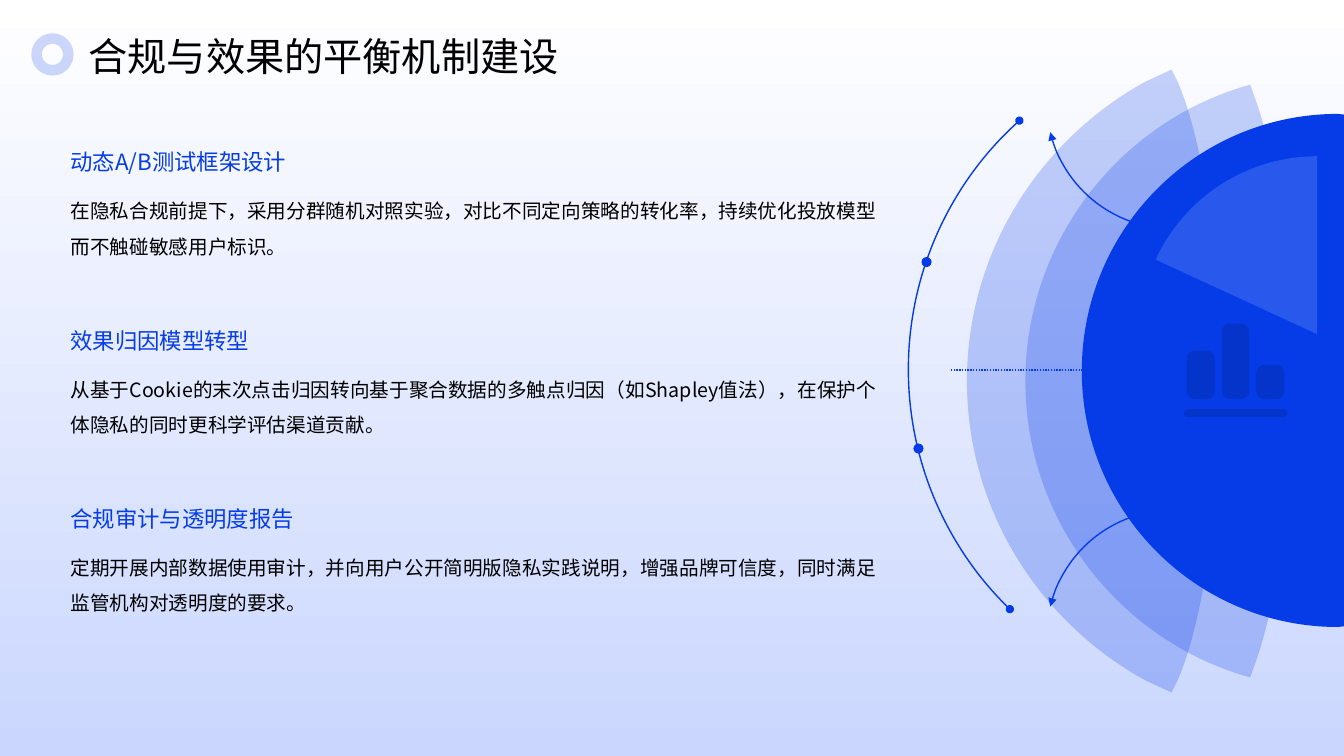
from lxml.etree import SubElement
from pptx import Presentation
from pptx.dml.color import RGBColor
from pptx.enum.dml import MSO_LINE
from pptx.enum.shapes import MSO_CONNECTOR, MSO_SHAPE
from pptx.enum.text import MSO_ANCHOR, MSO_AUTO_SIZE, PP_ALIGN
from pptx.oxml.ns import qn
from pptx.util import Inches, Pt

BLUE = "063CE8"
FONT = "Noto Sans CJK SC"
hex_color = RGBColor.from_string


def style_shape(shape, fill=None, alpha=100, line=None, head=None, tail=None):
    """Set solid fill with opacity in percent, outline with its ends, and no shadow."""
    properties = shape.element.spPr
    if fill:
        shape.fill.solid()
        shape.fill.fore_color.rgb = hex_color(fill)
        if alpha < 100:
            color = properties.find(qn("a:solidFill"))[0]
            SubElement(color, qn("a:alpha"), val=str(alpha * 1000))
    if line:
        shape.line.color.rgb = hex_color(line)
        shape.line.width = Pt(1)
        for tag, end in (("a:headEnd", head), ("a:tailEnd", tail)):
            if end:
                SubElement(properties.find(qn("a:ln")), qn(tag), type=end)
    else:
        shape.line.fill.background()
    SubElement(properties, qn("a:effectLst"))


def write_text(box, text, size, color="000000", spacing=1.0,
               anchor=MSO_ANCHOR.TOP, inset=(0, 0)):
    frame = box.text_frame
    frame.word_wrap = True
    frame.auto_size = MSO_AUTO_SIZE.NONE
    frame.vertical_anchor = anchor
    frame.margin_left = frame.margin_right = Inches(inset[0])
    frame.margin_top = frame.margin_bottom = Inches(inset[1])
    para = frame.paragraphs[0]
    para.alignment = PP_ALIGN.LEFT
    para.line_spacing = spacing
    span = para.add_run()
    span.text = text
    span.font.size = Pt(size)
    span.font.color.rgb = hex_color(color)
    span.font.name = FONT
    SubElement(span.font._element, qn("a:ea"), typeface=FONT)


deck = Presentation()
deck.slide_width, deck.slide_height = Inches(13.33), Inches(7.5)
page = deck.slides.add_slide(deck.slide_layouts[5])
shapes = page.shapes

backdrop = shapes.add_shape(MSO_SHAPE.RECTANGLE, 0, 0, deck.slide_width, deck.slide_height)
backdrop.fill.gradient()
backdrop.fill.gradient_angle = 270
for stop, color, position in zip(backdrop.fill.gradient_stops, ("FFFFFF", "CAD6FE"), (0, 1)):
    stop.color.rgb = hex_color(color)
    stop.position = position
style_shape(backdrop)

# Crescents: tip, then shoulder, two controls and side of each edge; the lower half mirrors
MIDDLE = 3.78
crescents = [
    ((11.62, 0.69),
     [(11.36, 0.81), (10.31, 1.39), (9.59, 2.5), (9.59, MIDDLE)],
     [(11.68, 0.81), (11.93, 1.39), (12.1, 2.5), (12.1, MIDDLE)]),
    ((12.4, 0.84),
     [(12.33, 0.86), (11.08, 1.24), (10.17, 2.41), (10.17, MIDDLE)],
     [(12.45, 0.98), (12.67, 1.59), (12.81, 2.62), (12.81, MIDDLE)]),
]
outlines = []
for tip, outer, inner in crescents:
    lower_tip, *lower = [(x, 2 * MIDDLE - y) for x, y in [tip] + outer + inner]
    points = ([tip] + outer + lower[2::-1] + [lower_tip]
              + lower[4:] + inner[2::-1] + [tip])
    outlines.append(([("MLCCLLCCL", points)], BLUE, 23))

# Disc running off the right edge of the page
disc = [(13.27, 1.13), (11.87, 1.13), (10.73, 2.27), (10.73, 3.68),
        (10.73, 5.08), (11.87, 6.22), (13.27, 6.22), (13.36, 6.21), (13.36, 1.14), (13.27, 1.13)]
outlines.append(([("MCCLLL", disc)], BLUE, 100))

# Bar chart icon: left, top, right, bottom and corner radius of the base and the bars
icon = []
for left, top, right, bottom, radius in [
    (11.74, 4.06, 12.77, 4.14, 0.04),
    (12.46, 3.62, 12.74, 3.96, 0.08),
    (11.77, 3.48, 12.05, 3.96, 0.08),
    (12.12, 3.21, 12.39, 3.96, 0.08),
]:
    bend = radius * 0.45
    points = [(left + radius, top)]
    for x, y, dx, dy in ((right, top, 1, 0), (right, bottom, 0, 1),
                         (left, bottom, -1, 0), (left, top, 0, -1)):
        points += [(x - dx * radius, y - dy * radius), (x - dx * bend, y - dy * bend),
                   (x - dy * bend, y + dx * bend), (x - dy * radius, y + dx * radius)]
    icon.append(("MLCLCLCLC", points))
outlines.append((icon, "052DAE", 49))

COMMANDS = {"M": ("a:moveTo", 1), "L": ("a:lnTo", 1), "C": ("a:cubicBezTo", 3)}
for contours, color, alpha in outlines:
    corners = [(Inches(x), Inches(y)) for _, points in contours for x, y in points]
    builder = shapes.build_freeform(*corners[0])
    builder.add_line_segments(corners[1:], close=True)
    outline = builder.convert_to_shape()
    route = next(outline.element.iter(qn("a:path")))
    for step in list(route):
        route.remove(step)
    for letters, points in contours:
        remaining = iter(points)
        for letter in letters:
            tag, count = COMMANDS[letter]
            step = SubElement(route, qn(tag))
            for _ in range(count):
                x, y = next(remaining)
                SubElement(step, qn("a:pt"), x=str(Inches(x) - outline.left),
                           y=str(Inches(y) - outline.top))
        SubElement(route, qn("a:close"))
    style_shape(outline, color, alpha=alpha)

# Arcs: left, top, size, adjustments, rotation, flips, style
arrow = {"line": BLUE, "head": "triangle"}
arcs = [
    (9.01, 0.35, 6.63, (187.14, 27.52), 0, ["flipH"],
     {"line": BLUE, "head": "oval", "tail": "oval"}),
    (10.38, 5.06, 2.51, (170.21, 210.76), 90, ["flipH", "flipV"], arrow),
    (10.38, -0.24, 2.51, (170.21, 210.76), 270, ["flipH"], arrow),
    (11.3, 1.55, 3.53, (162, 201.14), 0, ["flipH"], {"fill": "95AEFC", "alpha": 25}),
]
for left, top, size, angles, rotation, flips, look in arcs:
    arc = shapes.add_shape(MSO_SHAPE.ARC, Inches(left), Inches(top), Inches(size), Inches(size))
    arc.adjustments[0], arc.adjustments[1] = angles
    arc.rotation = rotation
    for flip in flips:
        arc.element.spPr.find(qn("a:xfrm")).set(flip, "1")
    arc.fill.background()
    style_shape(arc, **look)

pointer = shapes.add_connector(MSO_CONNECTOR.STRAIGHT, Inches(11.12), Inches(3.67),
                               Inches(9.42), Inches(3.67))
pointer.line.dash_style = MSO_LINE.ROUND_DOT
style_shape(pointer, **arrow)

for left, top in ((9.14, 2.55), (9.06, 4.4)):
    dot = shapes.add_shape(MSO_SHAPE.OVAL, Inches(left), Inches(top), Inches(0.1), Inches(0.1))
    style_shape(dot, BLUE)

# Three sections of heading and text
sections = [
    ("动态A/B测试框架设计",
     "在隐私合规前提下，采用分群随机对照实验，对比不同定向策略的转化率，持续优化投放模型而不触碰敏感用户标识。"),
    ("效果归因模型转型",
     "从基于Cookie的末次点击归因转向基于聚合数据的多触点归因（如Shapley值法），在保护个体隐私的同时更科学评估渠道贡献。"),
    ("合规审计与透明度报告",
     "定期开展内部数据使用审计，并向用户公开简明版隐私实践说明，增强品牌可信度，同时满足监管机构对透明度的要求。"),
]
for index, (heading, body) in enumerate(sections):
    top = 1.38 + 1.77 * index
    heading_box = shapes.add_textbox(Inches(0.7), Inches(top), Inches(8), Inches(0.36))
    write_text(heading_box, heading, 16, color=BLUE, spacing=1.2, anchor=MSO_ANCHOR.BOTTOM)
    body_box = shapes.add_textbox(Inches(0.7), Inches(top + 0.48), Inches(8), Inches(1.16))
    write_text(body_box, body, 14, spacing=1.5)

# Title with its ring, in front of the backdrop
ring = shapes.add_shape(MSO_SHAPE.DONUT, Inches(0.31), Inches(0.33), Inches(0.42), Inches(0.42))
style_shape(ring, BLUE, alpha=20)
title = shapes.title
title.left, title.top = Inches(0.78), Inches(0.19)
title.width, title.height = Inches(11.39), Inches(0.58)
write_text(title, "合规与效果的平衡机制建设", 28, spacing=1.3,
           anchor=MSO_ANCHOR.MIDDLE, inset=(0.1, 0.05))
ring.element.addnext(title.element)

deck.save("out.pptx")
